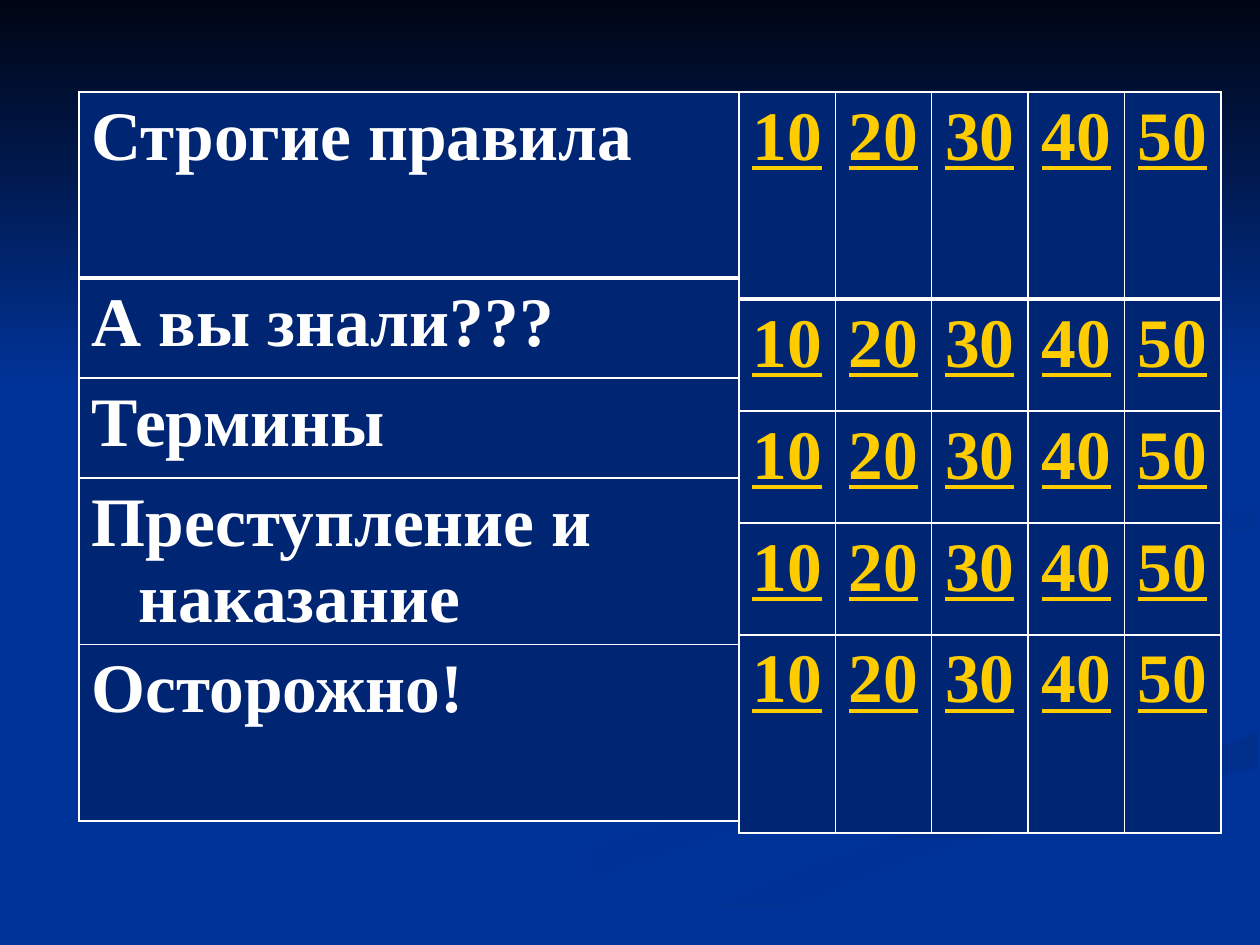
from pptx import Presentation, util as u
from pptx.dml import color
from pptx.enum import shapes, text
from pptx.oxml import parse_xml
from pptx.oxml.ns import nsdecls

SCALE = 914400 / 125
NAVY, CELL, WHITE, GOLD = "003399", "002673", "FFFFFF", "FFCC00"
TOPICS = [
    "Строгие правила",
    "А вы знали???",
    "Термины",
    "Преступление и наказание",
    "Осторожно!",
]
POINTS = ["10", "20", "30", "40", "50"]
LONG_RIBBON = [
    (985, 698), (954, 684), (900, 665), (809, 639), (759, 618), (729, 596),
    (725, 579), (719, 595), (739, 614), (795, 636), (899, 667), (960, 689),
    (990, 708), (988, 724), (956, 744), (881, 767), (776, 793), (629, 833),
    (525, 869), (425, 916), (378, 944), (455, 944), (543, 900), (629, 865),
    (749, 826), (881, 791), (969, 767), (996, 752), (1009, 731), (1003, 714),
]
LOWER_RIBBON = [
    (655, 941), (634, 944), (720, 944), (755, 924), (818, 895), (910, 859),
    (1035, 820), (1138, 794), (1258, 768), (1258, 731), (1229, 744),
    (1179, 758), (1093, 781), (964, 815), (834, 858), (754, 889), (684, 924),
]
UPPER_RIBBON = [
    (985, 580), (990, 598), (1015, 614), (1040, 625), (1019, 609), (1014, 595),
    (1029, 579), (1061, 564), (1106, 554), (1179, 540), (1224, 533),
    (1258, 530), (1258, 506), (1219, 515), (1131, 528), (1053, 541),
    (1008, 556), (990, 571),
]


def px(value):
    return round(value * SCALE)


def rgb(value):
    return color.RGBColor.from_string(value)


def apply_format(target, values):
    for name, value in values.items():
        setattr(target, name, value)


def set_gradient(shape, start, end, angle):
    shape.shadow.inherit = False
    shape.line.fill.background()
    shape.fill.gradient()
    shape.fill.gradient_angle = (360 - angle) % 360
    for stop, value, position in zip(shape.fill.gradient_stops, (start, end), (0, 1)):
        stop.color.rgb = rgb(value)
        stop.position = position


def add_ribbon(slide, points, start, end, angle):
    builder = slide.shapes.build_freeform(*points[0], scale=SCALE)
    builder.add_line_segments(points[1:], close=True)
    set_gradient(builder.convert_to_shape(), start, end, angle)


def add_top_shade(slide):
    shade = slide.shapes.add_shape(
        shapes.MSO_SHAPE.RECTANGLE, 0, 0, px(1260), px(389)
    )
    set_gradient(shade, "000514", NAVY, 90)


def set_borders(cell, widths):
    properties = cell._tc.get_or_add_tcPr()
    for index, (side, width) in enumerate(widths.items()):
        border = parse_xml(
            f'<a:{side} {nsdecls("a")} w="{u.Pt(width)}"><a:solidFill>'
            f'<a:srgbClr val="{WHITE}"/></a:solidFill></a:{side}>'
        )
        properties.insert(index, border)


def write_cell(cell, words, font_format, alignment, hanging):
    paragraph = cell.text_frame.paragraphs[0]
    paragraph.alignment = alignment
    if hanging:
        properties = paragraph._p.get_or_add_pPr()
        properties.set("marL", str(px(hanging)))
        properties.set("indent", str(-px(hanging)))
    run = paragraph.add_run()
    run.text = words
    apply_format(run.font, font_format)
    run.font.color.rgb = rgb(font_format_color(font_format))


def font_format_color(font_format):
    return GOLD if font_format["underline"] else WHITE


def add_board(slide, left, width, heights, rows, underline, alignment, hanging=0):
    frame = slide.shapes.add_table(
        len(rows), len(rows[0]), px(left), px(92), px(width), px(sum(heights))
    )
    table = frame.table
    apply_format(table, {"first_row": False, "horz_banding": False})
    font_format = {
        "name": "Times New Roman",
        "size": u.Pt(40),
        "bold": True,
        "underline": underline,
    }
    for row_index, (height, row) in enumerate(zip(heights, rows)):
        table.rows[row_index].height = px(height)
        for column_index, words in enumerate(row):
            cell = table.cell(row_index, column_index)
            cell.fill.solid()
            cell.fill.fore_color.rgb = rgb(CELL)
            top = 3 if row_index == 1 else 1
            bottom = 3 if row_index == 0 else 1
            set_borders(cell, {"lnL": 1, "lnR": 1, "lnT": top, "lnB": bottom})
            write_cell(cell, words, font_format, alignment, hanging if row_index else 0)


def main():
    presentation = Presentation()
    apply_format(presentation, {"slide_width": px(1260), "slide_height": px(945)})
    slide = presentation.slides.add_slide(presentation.slide_layouts[6])
    slide.background.fill.solid()
    slide.background.fill.fore_color.rgb = rgb(NAVY)
    add_ribbon(slide, LONG_RIBBON, NAVY, "003193", 0)
    add_ribbon(slide, LOWER_RIBBON, "002F8C", NAVY, 90)
    add_ribbon(slide, UPPER_RIBBON, "003091", NAVY, 45)
    add_top_shade(slide)
    add_board(
        slide, 739, 482, [207, 112, 112, 112, 198], [POINTS] * len(TOPICS),
        True, text.PP_ALIGN.CENTER,
    )
    add_board(
        slide, 79, 660, [186, 100, 100, 100, 177], [[topic] for topic in TOPICS],
        False, text.PP_ALIGN.LEFT, 47,
    )
    presentation.save("out.pptx")


if __name__ == "__main__":
    main()
